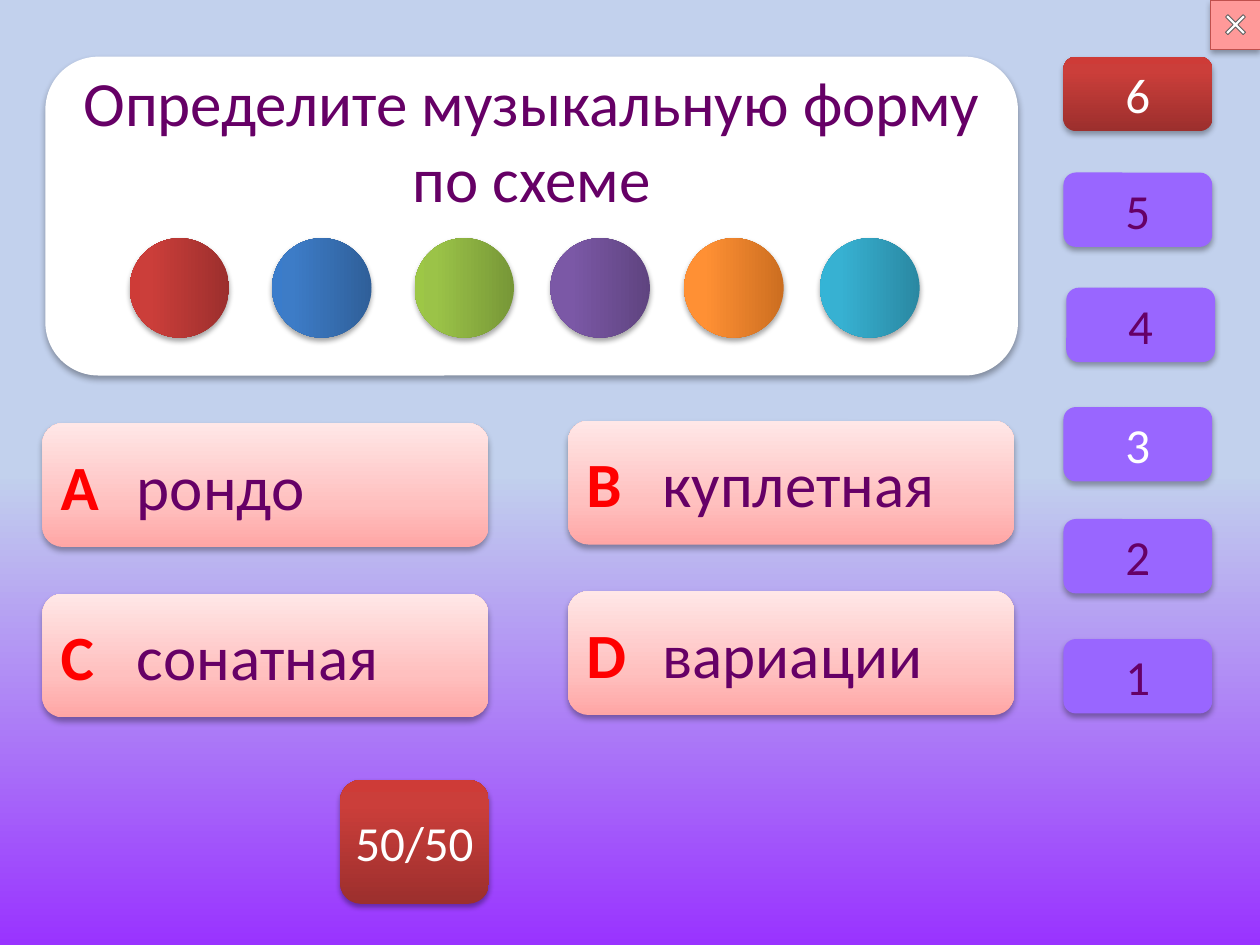
from lxml import etree
from pptx import Presentation
from pptx.dml.color import RGBColor
from pptx.enum.shapes import MSO_SHAPE as SHAPE
from pptx.enum.text import MSO_ANCHOR as ANCHOR, PP_ALIGN as ALIGN
from pptx.oxml.ns import qn
from pptx.util import Pt

FONT = "Calibri"
WHITE = RGBColor(0xFF, 0xFF, 0xFF)
PLUM = RGBColor(0x66, 0x00, 0x66)
RED = RGBColor(0xFF, 0x00, 0x00)
VIOLET = RGBColor(0x99, 0x66, 0xFF)
SALMON = RGBColor(0xFF, 0x99, 0x99)
BRICK = RGBColor(0xC0, 0x50, 0x4D)
GREY = RGBColor(0x5F, 0x5F, 0x5F)


def ramp(positions, *colors):
    return [(pos, RGBColor.from_string(c)) for pos, c in zip(positions, colors)]


GLOSS = (0, 80, 100)
SKY = ramp((0, 50), "9933FF", "C2D1ED")
PINK = ramp((0, 35, 100), "FFA6A5", "FFC0BF", "FFE7E7")
RED_GLOSS = ramp(GLOSS, "9C2F2D", "CB3E3A", "CE3B37")
SOFT = (32, 3.5, 2.2)
STRONG = (35, 3.1, 1.8)

QUESTION = "Определите музыкальную форму по схеме"
ANSWERS = [("А", "рондо"), ("В", "куплетная"), ("C", "сонатная"), ("D", "вариации")]
CIRCLES = [
    (74.2, RED_GLOSS),
    (155.5, ramp(GLOSS, "2F5F99", "3D7CC7", "3A7CCB")),
    (236.9, ramp(GLOSS, "779737", "9BC348", "9DC746")),
    (314.6, ramp(GLOSS, "5F4480", "7B58A6", "7C57A8")),
    (391, ramp(GLOSS, "CC6E20", "FF9034", "FF9136")),
    (468.7, ramp(GLOSS, "2A88A2", "37B1D2", "34B4D6")),
]
LEVELS = [
    ("6", 607.7, 32.4, RED_GLOSS, WHITE),
    ("5", 607.7, 98.6, VIOLET, PLUM),
    ("4", 609.3, 164.4, VIOLET, PLUM),
    ("3", 607.7, 232.6, VIOLET, WHITE),
    ("2", 607.7, 296.6, VIOLET, PLUM),
    ("1", 607.7, 365.2, VIOLET, PLUM),
]


def set_gradient(fill, element, stops):
    fill.gradient()
    fill.gradient_angle = 90
    gs_list = next(element.iter(qn("a:gsLst")))
    for gs in list(gs_list):
        gs_list.remove(gs)
    for pos, color in stops:
        gs = etree.SubElement(gs_list, qn("a:gs"), pos=str(pos * 1000))
        etree.SubElement(gs, qn("a:srgbClr"), val=str(color))


def set_shadow(shape, alpha, blur, dist):
    effects = shape.element.spPr.find(qn("a:effectLst"))
    outer = etree.SubElement(effects, qn("a:outerShdw"), blurRad=str(Pt(blur)),
                             dist=str(Pt(dist)), dir="5400000", rotWithShape="0")
    color = etree.SubElement(outer, qn("a:srgbClr"), val="000000")
    etree.SubElement(color, qn("a:alpha"), val=str(alpha * 1000))


def add_shape(shapes, kind, box, fill=None, line=None, shadow=None):
    sp = shapes.add_shape(kind, *map(Pt, box))
    if fill is None:
        sp.fill.background()
    elif isinstance(fill, list):
        set_gradient(sp.fill, sp.element, fill)
    else:
        sp.fill.solid()
        sp.fill.fore_color.rgb = fill
    if line is None:
        sp.line.fill.background()
    else:
        sp.line.color.rgb = line
        sp.line.width = Pt(0.5)
    sp.shadow.inherit = False
    if shadow:
        set_shadow(sp, *shadow)
    return sp


def add_text(sp, runs, size, align=ALIGN.CENTER, wrap=False, tab=None):
    tf = sp.text_frame
    tf.word_wrap = wrap
    tf.vertical_anchor = ANCHOR.MIDDLE
    p = tf.paragraphs[0]
    p.alignment = align
    if tab:
        tabs = etree.SubElement(p._p.get_or_add_pPr(), qn("a:tabLst"))
        etree.SubElement(tabs, qn("a:tab"), pos=str(Pt(tab)), algn="l")
    for text, color, bold in runs:
        r = p.add_run()
        r.text = text
        r.font.name = FONT
        r.font.size = Pt(size)
        r.font.bold = bold
        r.font.color.rgb = color
    return tf


prs = Presentation()
prs.slide_width, prs.slide_height = Pt(720), Pt(540)
s = prs.slides.add_slide(prs.slide_layouts[6])
set_gradient(s.background.fill, s.element, SKY)

close_box = (691.9, 0, 28.1, 28.1)
add_shape(s.shapes, SHAPE.ACTION_BUTTON_CUSTOM, close_box, SALMON, shadow=SOFT)
cross = add_shape(s.shapes, SHAPE.CROSS, (698.9, 7, 14.2, 14.2), WHITE, GREY)
cross.adjustments[0] = 0.435
cross.rotation = 45
add_shape(s.shapes, SHAPE.ACTION_BUTTON_CUSTOM, close_box, line=BRICK)

for i, (letter, answer) in enumerate(ANSWERS):
    row, col = divmod(i, 2)
    box = (24.2 + col * 300.4, 241.8 + row * 97.4 - col * 1.4, 255, 70.8)
    sp = add_shape(s.shapes, SHAPE.ROUNDED_RECTANGLE, box, PINK, shadow=SOFT)
    add_text(sp, [(letter + "\t", RED, True), (answer, PLUM, False)], 36,
             ALIGN.LEFT, wrap=True, tab=43.5)

hint = add_shape(s.shapes, SHAPE.ROUNDED_RECTANGLE, (194.4, 445.7, 85, 70.8),
                 RED_GLOSS, shadow=STRONG)
add_text(hint, [("50/50", WHITE, False)], 28)

group = s.shapes.add_group_shape()
card = add_shape(group.shapes, SHAPE.ROUNDED_RECTANGLE, (25.9, 32.4, 555.8, 182.2),
                 WHITE, shadow=SOFT)
tf = add_text(card, [(QUESTION, PLUM, False)], 36, wrap=True)
tf.margin_bottom = Pt(91)
for left, stops in CIRCLES:
    circle = add_shape(group.shapes, SHAPE.OVAL, (left, 136.1, 56.8, 56.8),
                       stops, shadow=STRONG)
    circle.rotation = 270

for label, left, top, fill, color in LEVELS:
    sp = add_shape(s.shapes, SHAPE.ROUNDED_RECTANGLE, (left, top, 85, 42.5),
                   fill, shadow=SOFT)
    add_text(sp, [(label, color, False)], 28)

prs.save("out.pptx")
